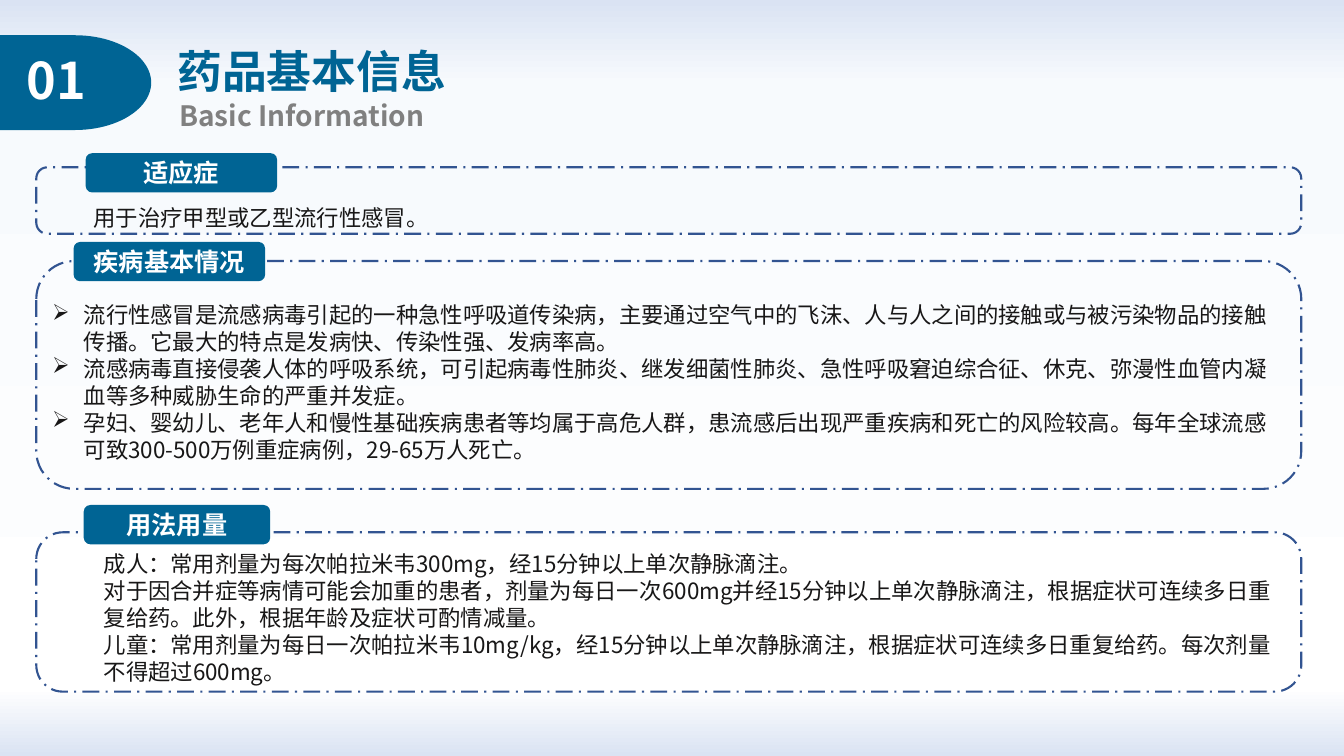
from typing import NamedTuple

from lxml import etree
from pptx import Presentation
from pptx.dml.color import RGBColor
from pptx.enum.dml import MSO_LINE
from pptx.enum.shapes import MSO_SHAPE
from pptx.enum.text import MSO_ANCHOR, MSO_AUTO_SIZE, PP_ALIGN
from pptx.oxml.ns import qn
from pptx.shapes.autoshape import Shape
from pptx.slide import Slide
from pptx.util import Pt

FONT = "Noto Sans CJK SC"
TEAL = RGBColor(0x00, 0x64, 0x94)
OUTLINE_BLUE = RGBColor(0x32, 0x54, 0x91)
WHITE = RGBColor(0xFF, 0xFF, 0xFF)
GREY = RGBColor(0x80, 0x80, 0x80)
INK = RGBColor(0x18, 0x17, 0x17)
PALE_BLUE = RGBColor(0xDA, 0xE3, 0xF3)
NEAR_WHITE = RGBColor(0xF7, 0xFA, 0xFD)
BACKGROUND_STOPS = [(0, PALE_BLUE), (11, NEAR_WHITE), (91, WHITE), (100, PALE_BLUE)]

LEFT, CENTER, JUSTIFY = PP_ALIGN.LEFT, PP_ALIGN.CENTER, PP_ALIGN.JUSTIFY
TOP, MIDDLE = MSO_ANCHOR.TOP, MSO_ANCHOR.MIDDLE
GROW, FIXED = MSO_AUTO_SIZE.SHAPE_TO_FIT_TEXT, MSO_AUTO_SIZE.NONE
PANEL, TAG, DELAY = (MSO_SHAPE.ROUNDED_RECTANGLE,
                     MSO_SHAPE.FLOWCHART_ALTERNATE_PROCESS,
                     MSO_SHAPE.FLOWCHART_DELAY)
DASH_DOT = MSO_LINE.LONG_DASH_DOT

PANEL_LEFT, PANEL_WIDTH = 25.9, 903.6
TAG_HEIGHT = 28.1
BULLET_INDENT = 22.5


class Box(NamedTuple):
    left: float
    top: float
    width: float
    height: float


class Style(NamedTuple):
    size: float
    color: RGBColor
    bold: bool = True
    align: PP_ALIGN = LEFT
    line_spacing: float | None = None


class Section(NamedTuple):
    heading: str
    panel: Box
    tag: Box
    body: Box
    paragraphs: list[str]
    bulleted: bool = False


TITLE_STYLE = Style(32, TEAL, align=CENTER, line_spacing=1.5)
SUBTITLE_STYLE = Style(20, GREY, align=JUSTIFY, line_spacing=1.5)
NUMBER_STYLE = Style(36, WHITE, align=JUSTIFY)
TAG_STYLE = Style(18, WHITE, align=CENTER)
BODY_STYLE = Style(16, INK, bold=False)

SECTIONS = [
    Section(
        "适应症",
        Box(PANEL_LEFT, 119.5, PANEL_WIDTH, 47.5),
        Box(61.2, 109.4, 136.8, TAG_HEIGHT),
        Box(59.8, 142.6, 730.8, 26.6),
        ["用于治疗甲型或乙型流行性感冒。"],
    ),
    Section(
        "疾病基本情况",
        Box(PANEL_LEFT, 186.5, PANEL_WIDTH, 162.7),
        Box(52.6, 172.8, 136.8, TAG_HEIGHT),
        Box(30.2, 211.7, 891.4, 123.8),
        [
            "流行性感冒是流感病毒引起的一种急性呼吸道传染病，主要通过空气中的飞沫、"
            "人与人之间的接触或与被污染物品的接触传播。它最大的特点是发病快、传染性强、发病率高。",
            "流感病毒直接侵袭人体的呼吸系统，可引起病毒性肺炎、继发细菌性肺炎、"
            "急性呼吸窘迫综合征、休克、弥漫性血管内凝血等多种威胁生命的严重并发症。",
            "孕妇、婴幼儿、老年人和慢性基础疾病患者等均属于高危人群，"
            "患流感后出现严重疾病和死亡的风险较高。"
            "每年全球流感可致300-500万例重症病例，29-65万人死亡。",
        ],
        bulleted=True,
    ),
    Section(
        "用法用量",
        Box(PANEL_LEFT, 380.2, PANEL_WIDTH, 113.8),
        Box(59.8, 360.7, 133.2, TAG_HEIGHT),
        Box(67, 389.5, 854.6, 104.4),
        [
            "成人：常用剂量为每次帕拉米韦300mg，经15分钟以上单次静脉滴注。",
            "对于因合并症等病情可能会加重的患者，剂量为每日一次600mg并经15分钟以上单次静脉滴注，"
            "根据症状可连续多日重复给药。此外，根据年龄及症状可酌情减量。",
            "儿童：常用剂量为每日一次帕拉米韦10mg/kg，经15分钟以上单次静脉滴注，"
            "根据症状可连续多日重复给药。每次剂量不得超过600mg。",
        ],
    ),
]


def points(box: Box) -> list[Pt]:
    return [Pt(length) for length in box]


def paint_background(slide: Slide) -> None:
    fill = slide.background.fill
    fill.gradient()
    fill.gradient_angle = 270
    stops = slide.background._cSld.find(".//" + qn("a:gsLst"))
    for stop in list(stops):
        stops.remove(stop)
    for percent, color in BACKGROUND_STOPS:
        stop = etree.SubElement(stops, qn("a:gs"), pos=str(percent * 1000))
        etree.SubElement(stop, qn("a:srgbClr"), val=str(color))


def write(shape: Shape, paragraphs: list[str], style: Style, anchor: MSO_ANCHOR = TOP,
          auto_size: MSO_AUTO_SIZE = GROW, bulleted: bool = False) -> None:
    frame = shape.text_frame
    frame.word_wrap = True
    frame.auto_size = auto_size
    frame.vertical_anchor = anchor
    frame.text = "\n".join(paragraphs)
    for paragraph in frame.paragraphs:
        paragraph.alignment = style.align
        if style.line_spacing:
            paragraph.line_spacing = style.line_spacing
        font = paragraph.font
        font.name, font.size, font.bold = FONT, Pt(style.size), style.bold
        font.color.rgb = style.color
        # East Asian typeface and hanging bullet
        properties = paragraph._p.get_or_add_pPr()
        defaults = properties.find(qn("a:defRPr"))
        etree.SubElement(defaults, qn("a:ea"), typeface=FONT)
        if bulleted:
            properties.set("marL", str(Pt(BULLET_INDENT)))
            properties.set("indent", str(-Pt(BULLET_INDENT)))
            bullet = etree.Element(qn("a:buChar"), char="➢")
            defaults.addprevious(bullet)


def add_text(slide: Slide, box: Box, paragraphs: list[str], style: Style,
             bulleted: bool = False) -> None:
    write(slide.shapes.add_textbox(*points(box)), paragraphs, style, bulleted=bulleted)


def add_filled(slide: Slide, kind: MSO_SHAPE, box: Box) -> Shape:
    shape = slide.shapes.add_shape(kind, *points(box))
    shape.shadow.inherit = False
    shape.fill.solid()
    shape.fill.fore_color.rgb = TEAL
    shape.line.fill.background()
    return shape


def add_panel(slide: Slide, box: Box) -> None:
    panel = slide.shapes.add_shape(PANEL, *points(box))
    panel.shadow.inherit = False
    panel.fill.background()
    panel.line.color.rgb = OUTLINE_BLUE
    panel.line.width = Pt(1.5)
    panel.line.dash_style = DASH_DOT


def add_section(slide: Slide, section: Section) -> None:
    add_panel(slide, section.panel)
    tag = add_filled(slide, TAG, section.tag)
    write(tag, [section.heading], TAG_STYLE, MIDDLE, FIXED)
    add_text(slide, section.body, section.paragraphs, BODY_STYLE, section.bulleted)


def main() -> None:
    deck = Presentation()
    deck.slide_width, deck.slide_height = Pt(960), Pt(540)
    slide = deck.slides.add_slide(deck.slide_layouts.get_by_name("Title Only"))
    paint_background(slide)

    # Header: number badge, title and subtitle
    add_filled(slide, DELAY, Box(-0.7, 25.2, 108.7, 67.7))
    add_text(slide, Box(12.2, 31.7, 61.2, 51.1), ["01"], NUMBER_STYLE)
    title = slide.shapes.title
    title.left, title.top, title.width, title.height = points(Box(61.2, 8.6, 323.3, 58.3))
    write(title, ["药品基本信息"], TITLE_STYLE)
    add_text(slide, Box(121, 54.7, 204.5, 39.6), ["Basic Information"], SUBTITLE_STYLE)

    # Framed sections
    for section in SECTIONS:
        add_section(slide, section)

    deck.save("out.pptx")


if __name__ == "__main__":
    main()
